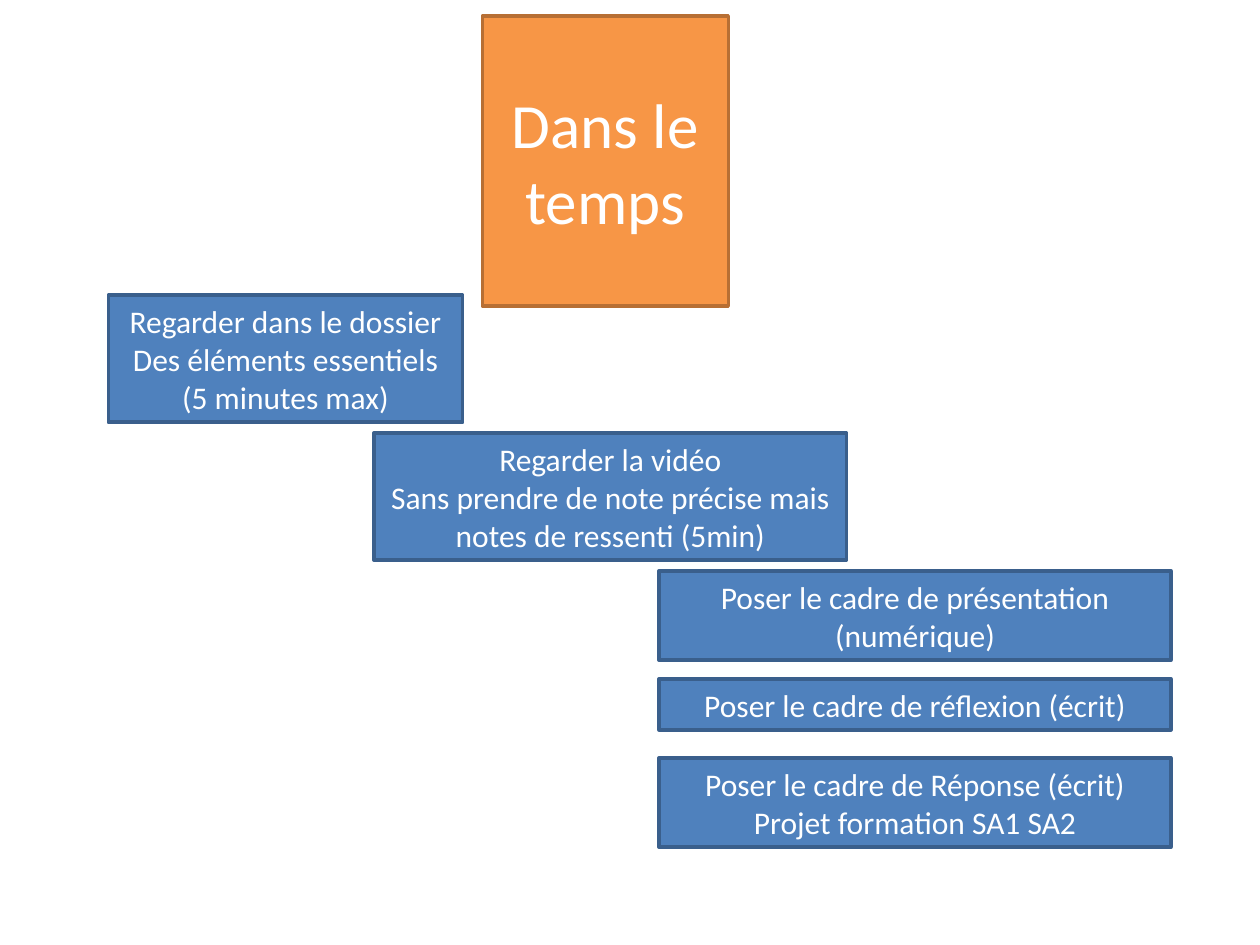
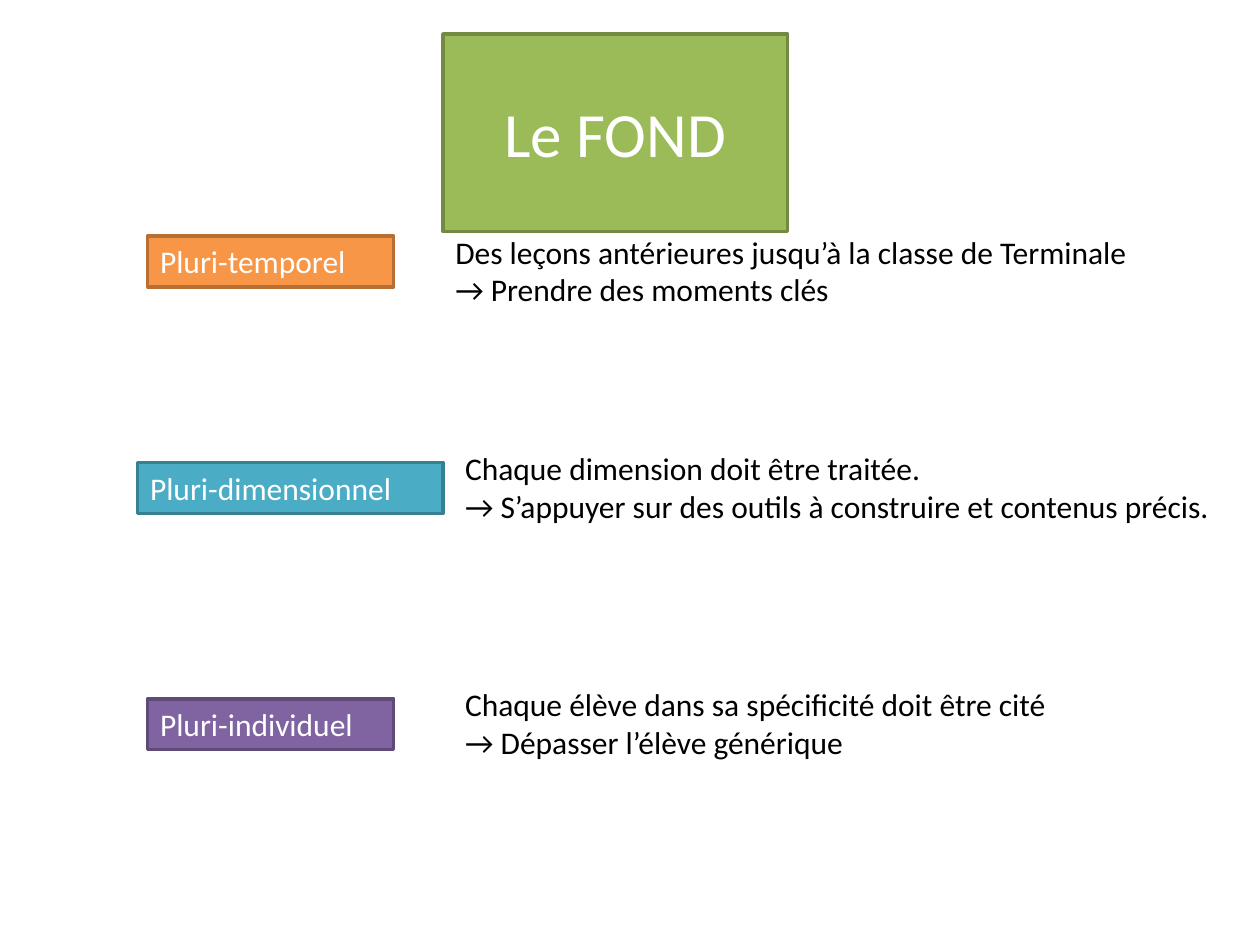
"""Build two slides: the steps over time, then the three dimensions of the content."""
from pptx import Presentation
from pptx.dml.color import RGBColor
from pptx.enum import shapes, text
from pptx.util import Pt

WHITE = RGBColor(0xFF, 0xFF, 0xFF)
BLACK = RGBColor(0x00, 0x00, 0x00)
BLUE = RGBColor(0x4F, 0x81, 0xBD), RGBColor(0x3A, 0x5F, 0x8C)
ORANGE = RGBColor(0xF7, 0x96, 0x46), RGBColor(0xB7, 0x6F, 0x34)
GREEN = RGBColor(0x9B, 0xBB, 0x59), RGBColor(0x73, 0x8A, 0x42)
TEAL = RGBColor(0x4B, 0xAC, 0xC6), RGBColor(0x37, 0x7F, 0x92)
PURPLE = RGBColor(0x80, 0x64, 0xA2), RGBColor(0x5F, 0x4A, 0x78)
LEFT, CENTER = text.PP_ALIGN.LEFT, text.PP_ALIGN.CENTER


def write(shape, lines, size, color, alignment):
    frame = shape.text_frame
    frame.text = "\n".join(lines)
    frame.word_wrap = True
    frame.auto_size = text.MSO_AUTO_SIZE.SHAPE_TO_FIT_TEXT
    for paragraph in frame.paragraphs:
        paragraph.alignment = alignment
        paragraph.font.name = "Calibri"
        paragraph.font.size = Pt(size)
        paragraph.font.color.rgb = color


def add_box(slide, box, colors, lines, alignment):
    shape = slide.shapes.add_shape(shapes.MSO_SHAPE.RECTANGLE, *map(Pt, box))
    shape.shadow.inherit = False
    shape.fill.solid()
    shape.fill.fore_color.rgb, shape.line.color.rgb = colors
    shape.line.width = Pt(2)
    write(shape, lines, 18, WHITE, alignment)


presentation = Presentation()
presentation.slide_width, presentation.slide_height = Pt(720), Pt(540)

slides = []
for title_text, box, colors in [
    ("Dans le temps", (275.6, 44.8, 140.6, 94.5), ORANGE),
    ("Le FOND", (253.1, 50.4, 196.9, 50.9), GREEN),
]:
    slide = presentation.slides.add_slide(presentation.slide_layouts[5])
    title = slide.shapes.title
    title.left, title.top, title.width, title.height = map(Pt, box)
    title.fill.solid()
    title.fill.fore_color.rgb, title.line.color.rgb = colors
    title.line.width = Pt(2)
    write(title, [title_text], 36, WHITE, CENTER)
    slides.append(slide)
time_slide, content_slide = slides

STEPS = [
    ((61.9, 168.6, 202.5, 72.7),
     ["Regarder dans le dossier", "Des éléments essentiels (5 minutes max)"]),
    ((213.8, 247.4, 270, 72.7),
     ["Regarder la vidéo",
      "Sans prendre de note précise mais notes de ressenti (5min)"]),
    ((376.6, 326.3, 292.5, 50.9), ["Poser le cadre de présentation (numérique)"]),
    ((376.6, 388, 292.5, 29.1), ["Poser le cadre de réflexion (écrit)"]),
    ((376.6, 433.2, 292.5, 50.9),
     ["Poser le cadre de Réponse (écrit)", "Projet formation SA1 SA2"]),
]
for box, lines in STEPS:
    add_box(time_slide, box, BLUE, lines, CENTER)

DIMENSIONS = [
    ("Pluri-temporel", ORANGE, (84.4, 134.8, 140.6, 29.1), (253.1, 129.4),
     ["Des leçons antérieures jusqu’à la classe de Terminale",
      "→ Prendre des moments clés"]),
    ("Pluri-dimensionnel", TEAL, (78.7, 264.3, 174.4, 29.1), (258.7, 253.1),
     ["Chaque dimension doit être traitée.",
      "→ S’appuyer sur des outils à construire et contenus précis."]),
    ("Pluri-individuel", PURPLE, (84.4, 399.3, 140.6, 29.1), (258.7, 388.1),
     ["Chaque élève dans sa spécificité doit être cité",
      "→ Dépasser l’élève générique"]),
]
for label, colors, box, position, lines in DIMENSIONS:
    add_box(content_slide, box, colors, [label], LEFT)
    explanation = content_slide.shapes.add_textbox(
        *map(Pt, position), Pt(444.2), Pt(50.9))
    write(explanation, lines, 18, BLACK, LEFT)

presentation.save("out.pptx")
